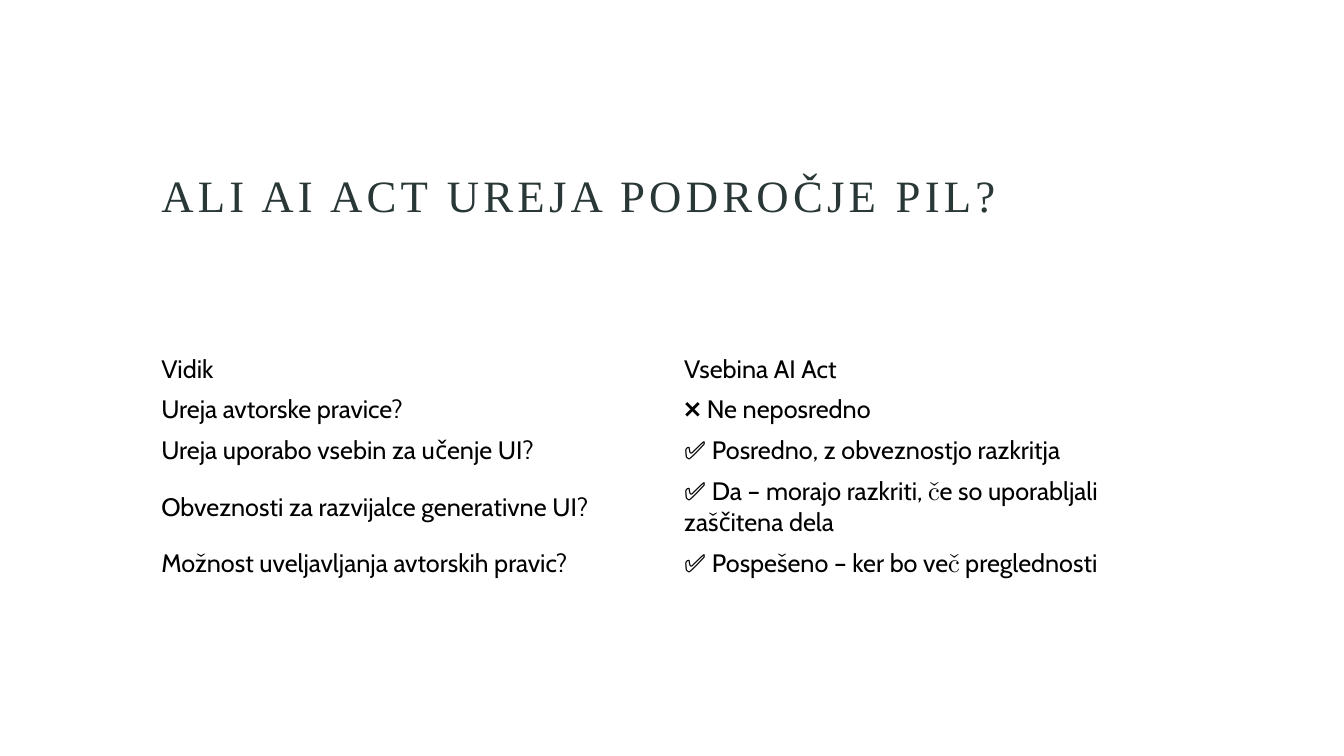
"""Build the slide on whether the AI Act governs intellectual property."""
from dataclasses import dataclass

from pptx import Presentation
from pptx.dml.color import RGBColor
from pptx.enum.text import MSO_ANCHOR, MSO_AUTO_SIZE, PP_ALIGN
from pptx.util import Pt

LEFT = PP_ALIGN.LEFT
MIDDLE = MSO_ANCHOR.MIDDLE
BOTTOM = MSO_ANCHOR.BOTTOM
NO_AUTOFIT = MSO_AUTO_SIZE.NONE

TITLE = "ALI AI ACT UREJA PODROČJE PIL?"
ROWS = [
    ("Vidik", "Vsebina AI Act"),
    ("Ureja avtorske pravice?", "❌ Ne neposredno"),
    ("Ureja uporabo vsebin za učenje UI?", "✅ Posredno, z obveznostjo razkritja"),
    ("Obveznosti za razvijalce generativne UI?",
     "✅ Da – morajo razkriti, če so uporabljali zaščitena dela"),
    ("Možnost uveljavljanja avtorskih pravic?", "✅ Pospešeno – ker bo več preglednosti"),
]


@dataclass(frozen=True)
class Theme:
    """Colours, fonts and type sizes."""
    title_font: str = "Times New Roman"
    body_font: str = "Cabin"
    title_color: str = "293737"
    body_color: str = "000000"
    title_size: int = 32
    body_size: int = 18
    title_tracking: int = 300


THEME = Theme()
SLIDE_WIDTH, SLIDE_HEIGHT = 960, 540
MARGIN, CONTENT_WIDTH = 108, 747
TITLE_TOP, TITLE_HEIGHT = 54, 108
TABLE_TOP, ROW_HEIGHT = 249, 29.2


def style_font(font, name, size, color):
    """Apply a typeface, size and colour."""
    font.name = name
    font.size = Pt(size)
    font.color.rgb = RGBColor.from_string(color)


def add_title(page):
    """Place and format the title placeholder."""
    title = page.shapes.title
    title.left, title.top = Pt(MARGIN), Pt(TITLE_TOP)
    title.width, title.height = Pt(CONTENT_WIDTH), Pt(TITLE_HEIGHT)
    frame = title.text_frame
    frame.text = TITLE
    frame.auto_size = NO_AUTOFIT
    frame.vertical_anchor = BOTTOM
    para = frame.paragraphs[0]
    para.alignment = LEFT
    para.line_spacing = 0.9
    span_font = para.runs[0].font
    style_font(span_font, THEME.title_font, THEME.title_size, THEME.title_color)
    para.runs[0]._r.get_or_add_rPr().set("spc", str(THEME.title_tracking))


def add_comparison(page):
    """Add the plain two-column table."""
    table = page.shapes.add_table(
        len(ROWS), len(ROWS[0]), Pt(MARGIN), Pt(TABLE_TOP),
        Pt(CONTENT_WIDTH), Pt(ROW_HEIGHT * len(ROWS))).table
    table.first_row = False
    table.horz_banding = False
    for row, texts in zip(table.rows, ROWS):
        row.height = Pt(ROW_HEIGHT)
        for cell, text in zip(row.cells, texts):
            cell.text = text
            cell.fill.background()
            cell.vertical_anchor = MIDDLE
            style_font(cell.text_frame.paragraphs[0].font,
                       THEME.body_font, THEME.body_size, THEME.body_color)


def main():
    """Create and save the deck."""
    deck = Presentation()
    deck.slide_width, deck.slide_height = Pt(SLIDE_WIDTH), Pt(SLIDE_HEIGHT)
    page = deck.slides.add_slide(deck.slide_layouts[5])
    add_title(page)
    add_comparison(page)
    deck.save("out.pptx")


if __name__ == "__main__":
    main()
